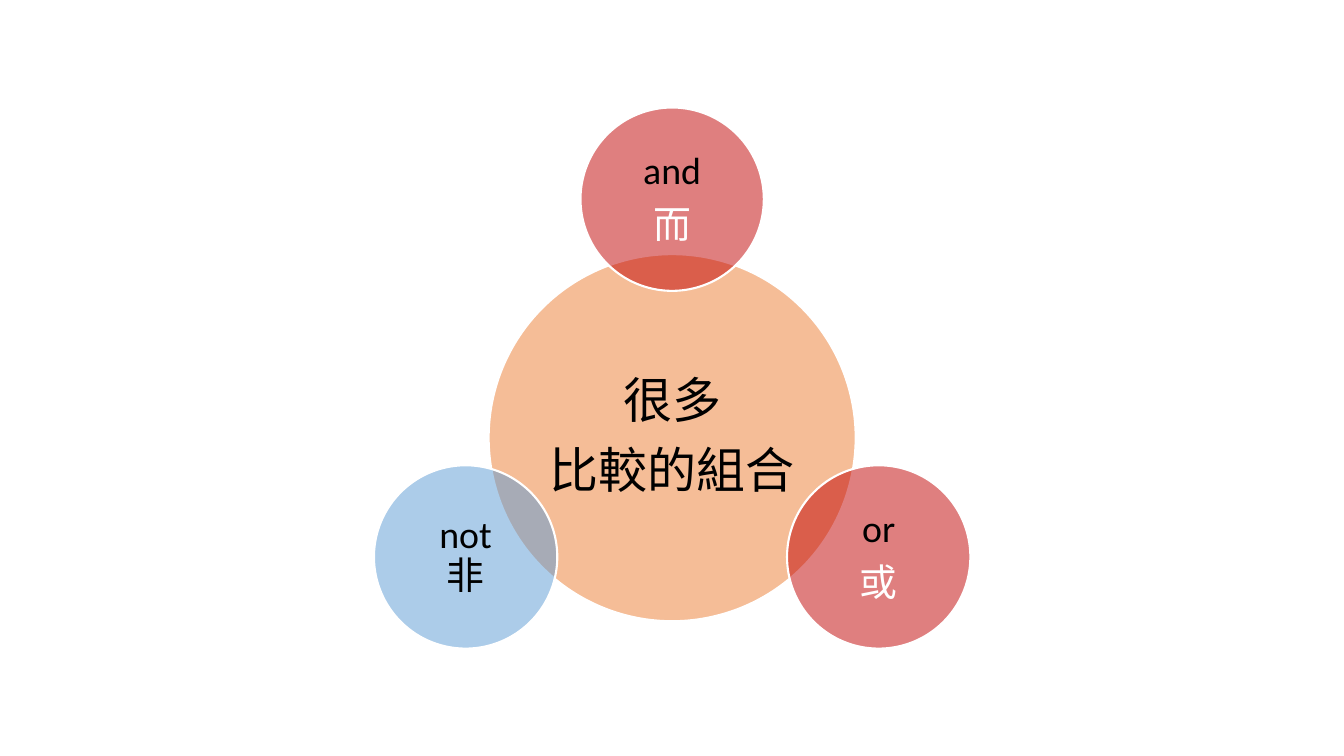
"""Radial Venn slide: one central idea with three logical operators around it."""
from math import cos, radians, sin

from lxml.etree import SubElement
from pptx import Presentation
from pptx.dml.color import RGBColor
from pptx.enum.shapes import MSO_SHAPE
from pptx.enum.text import MSO_ANCHOR, PP_ALIGN
from pptx.oxml.ns import qn
from pptx.util import Cm, Pt

ORANGE = RGBColor(0xED, 0x7D, 0x31)
RED = RGBColor(0xC0, 0x00, 0x00)
BLUE = RGBColor(0x5B, 0x9B, 0xD5)
BLACK = RGBColor(0x00, 0x00, 0x00)
WHITE = RGBColor(0xFF, 0xFF, 0xFF)
LATIN, CJK = "Calibri", "Noto Sans CJK SC"
CENTER_X, CENTER_Y, ORBIT = 16.94, 11.03, 6.01


def add_circle(shapes, x, y, diameter, color, inset):
    sp = shapes.add_shape(MSO_SHAPE.OVAL, Cm(x - diameter / 2), Cm(y - diameter / 2),
                          Cm(diameter), Cm(diameter))
    sp.shadow.inherit = False
    sp.fill.solid()
    sp.fill.fore_color.rgb = color
    srgb = sp.fill._xPr.find(qn("a:solidFill")).find(qn("a:srgbClr"))
    SubElement(srgb, qn("a:alpha"), val="50000")
    sp.line.color.rgb = WHITE
    sp.line.width = Pt(1.5)
    tf = sp.text_frame
    tf.word_wrap = True
    tf.vertical_anchor = MSO_ANCHOR.MIDDLE
    tf.margin_left = tf.margin_right = tf.margin_top = tf.margin_bottom = Cm(inset)
    return tf


def add_run(p, text, size, font, color):
    p.alignment = PP_ALIGN.CENTER
    p.line_spacing = 0.9
    p.space_after = Pt(size * 0.35)
    r = p.add_run()
    r.text = text
    r.font.size = Pt(size)
    r.font.name = font
    r.font.color.rgb = color


prs = Presentation()
prs.slide_width, prs.slide_height = Cm(33.87), Cm(19.05)
s = prs.slides.add_slide(prs.slide_layouts[6])
diagram = s.shapes.add_group_shape().shapes

tf = add_circle(diagram, CENTER_X, CENTER_Y, 9.25, ORANGE, 0.12)
add_run(tf.paragraphs[0], "很多", 35, CJK, BLACK)
add_run(tf.add_paragraph(), "比較的組合", 35, CJK, BLACK)

operators = [
    (-90, RED, "and", "而", WHITE, False),
    (30, RED, "or", "或", WHITE, False),
    (150, BLUE, "not", "非", BLACK, True),
]
for angle, fill, word, hanzi, hanzi_color, same_paragraph in operators:
    x = CENTER_X + ORBIT * cos(radians(angle))
    y = CENTER_Y + ORBIT * sin(radians(angle))
    tf = add_circle(diagram, x, y, 4.62, fill, 0.09)
    p = tf.paragraphs[0]
    add_run(p, word, 27, LATIN, BLACK)
    if same_paragraph:
        p.add_line_break()
    else:
        p = tf.add_paragraph()
    add_run(p, hanzi, 27, LATIN if same_paragraph else CJK, hanzi_color)

prs.save("out.pptx")
